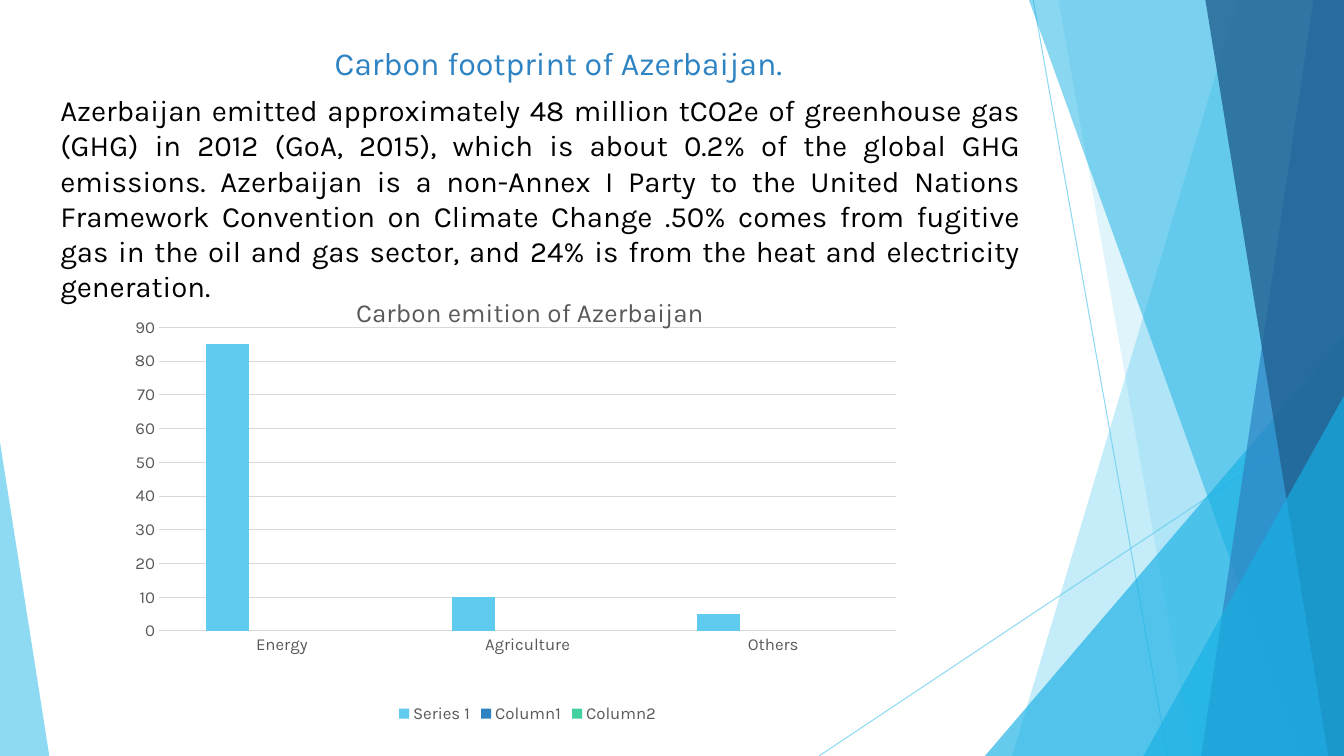
from lxml.etree import SubElement
from pptx import Presentation
from pptx.chart.data import CategoryChartData
from pptx.dml.color import RGBColor
from pptx.enum.chart import XL_CHART_TYPE, XL_LEGEND_POSITION, XL_TICK_MARK
from pptx.enum.shapes import MSO_CONNECTOR, MSO_SHAPE
from pptx.enum.text import MSO_ANCHOR, PP_ALIGN
from pptx.oxml.ns import qn
from pptx.util import Pt

EMU_PER_PX = 9525
WIDTH, HEIGHT = 1280, 720
FONT = "Karla"
COLORS = {
    "sky": "5FCBEF",
    "cyan": "17B0E4",
    "blue": "2E83C3",
    "navy": "226292",
    "green": "42D0A2",
    "black": "000000",
    "label": "595959",
    "grid": "D9D9D9",
}
SUMMARY = (
    "Azerbaijan emitted approximately 48 million tCO2e of greenhouse gas (GHG) in 2012 "
    "(GoA, 2015), which is about 0.2% of the global GHG emissions. Azerbaijan is a "
    "non-Annex I Party to the United Nations Framework Convention on Climate Change .50% "
    "comes from fugitive gas in the oil and gas sector, and 24% is from the heat and "
    "electricity generation."
)


def px(*lengths):
    return [length * EMU_PER_PX for length in lengths]


def rgb(name):
    return RGBColor.from_string(COLORS[name])


def set_alpha(shape, percent):
    for color in shape._element.spPr.iter(qn("a:srgbClr")):
        SubElement(color, qn("a:alpha"), val=str(percent * 1000))


def set_font(font, size, color):
    font.name = FONT
    font.size = Pt(size)
    font.bold = False
    font.color.rgb = rgb(color)


def place_by_fraction(part, target, **fractions):
    """Fix a chart part at fractions of the chart area."""
    layout = part.find(qn("c:layout"))
    if layout is None:
        layout = SubElement(part, qn("c:layout"))
    manual = SubElement(layout, qn("c:manualLayout"))
    if target:
        SubElement(manual, qn("c:layoutTarget"), val=target)
    for axis in "xy":
        SubElement(manual, qn(f"c:{axis}Mode"), val="edge")
    for key, fraction in fractions.items():
        SubElement(manual, qn(f"c:{key}"), val=str(fraction))
    return layout


class SlideBuilder:
    def __init__(self, slide):
        self.slide = slide
        self.shapes = slide.shapes

    def line(self, *ends):
        ray = self.shapes.add_connector(MSO_CONNECTOR.STRAIGHT, *px(*ends))
        ray.line.color.rgb = rgb("sky")
        ray.line.width = Pt(0.75)
        set_alpha(ray, 70)
        SubElement(ray._element.spPr, qn("a:effectLst"))

    def fill(self, shape, color, alpha):
        shape.shadow.inherit = False
        shape.fill.solid()
        shape.fill.fore_color.rgb = rgb(color)
        shape.line.fill.background()
        set_alpha(shape, alpha)

    def shard(self, top_x, bottom_x, color, alpha):
        """Full-height band from a slanted left edge to the slide's right edge."""
        outline = self.shapes.build_freeform(top_x, 0, scale=EMU_PER_PX)
        outline.add_line_segments([(WIDTH, 0), (WIDTH, HEIGHT), (bottom_x, HEIGHT)])
        self.fill(outline.convert_to_shape(), color, alpha)

    def corner(self, left, top, width, apex, color, alpha):
        """Triangle standing on the slide's bottom edge."""
        triangle = self.shapes.add_shape(
            MSO_SHAPE.ISOSCELES_TRIANGLE, *px(left, top, width, HEIGHT - top))
        triangle.adjustments[0] = apex
        self.fill(triangle, color, alpha)

    def set_text(self, holder, text, size, color, align):
        frame = holder.text_frame
        frame.word_wrap = True
        frame.vertical_anchor = MSO_ANCHOR.TOP
        frame.text = text
        paragraph = frame.paragraphs[0]
        paragraph.alignment = align
        set_font(paragraph.font, size, color)

    def title(self, text, *box):
        heading = self.shapes.title
        heading.left, heading.top, heading.width, heading.height = px(*box)
        self.set_text(heading, text, 23, "blue", PP_ALIGN.LEFT)

    def text(self, text, *box):
        self.set_text(self.shapes.add_textbox(*px(*box)), text, 21, "black", PP_ALIGN.JUSTIFY)

    def column_chart(self, title, categories, series, *box):
        """Draw clustered columns; series is a list of (name, values, color)."""
        data = CategoryChartData()
        data.categories = categories
        for name, values, _ in series:
            data.add_series(name, values)
        chart = self.shapes.add_chart(
            XL_CHART_TYPE.COLUMN_CLUSTERED, *px(*box), data).chart
        set_font(chart.font, 10, "black")

        chart.has_title = True
        chart.chart_title.text_frame.text = title
        set_font(chart.chart_title.text_frame.paragraphs[0].font, 18.6, "label")
        chart.chart_title.include_in_layout = False
        heading = chart.chart_title._element
        layout = place_by_fraction(heading, None, x=0.28, y=0.05)
        heading.find(qn("c:tx")).addnext(layout)

        chart.has_legend = True
        chart.legend.position = XL_LEGEND_POSITION.BOTTOM
        chart.legend.include_in_layout = False
        set_font(chart.legend.font, 12, "label")

        for axis in (chart.category_axis, chart.value_axis):
            axis.major_tick_mark = axis.minor_tick_mark = XL_TICK_MARK.NONE
            set_font(axis.tick_labels.font, 12, "label")
        chart.value_axis.minimum_scale = 0
        chart.value_axis.maximum_scale = 90
        chart.value_axis.major_unit = 10
        chart.value_axis.format.line.fill.background()
        for rule in (chart.category_axis.format.line,
                     chart.value_axis.major_gridlines.format.line):
            rule.color.rgb = rgb("grid")
            rule.width = Pt(0.75)

        plot = chart.plots[0]
        plot.vary_by_categories = False
        plot.gap_width = 219
        plot.overlap = -27
        for columns, (_, _, color) in zip(plot.series, series):
            columns.format.fill.solid()
            columns.format.fill.fore_color.rgb = rgb(color)
        area = chart._chartSpace.chart.plotArea
        area.insert(0, place_by_fraction(area, "inner", x=0.04, y=0.13, w=0.92, h=0.66))


def main():
    deck = Presentation()
    deck.slide_width, deck.slide_height = px(WIDTH, HEIGHT)
    page = SlideBuilder(deck.slides.add_slide(deck.slide_layouts[5]))

    page.line(984, 0, 1112, HEIGHT)
    page.line(WIDTH, 387, 780, HEIGHT)
    page.shard(1179, 964, "sky", 36)
    page.shard(1008, 1136, "sky", 20)
    page.corner(938, 320, 342, 1, "cyan", 66)
    page.shard(980, 1239, "cyan", 50)
    page.shard(1251, 1144, "blue", 70)
    page.shard(1148, 1265, "navy", 80)
    page.corner(1089, 377, 191, 1, "cyan", 66)
    page.corner(0, 421, 47, 0, "sky", 70)

    page.title("Carbon footprint of Azerbaijan.", 309, 36, 612, 47)
    page.text(SUMMARY, 48, 83, 933, 213)
    page.column_chart(
        "Carbon emition of Azerbaijan",
        ["Energy", "Agriculture", "Others"],
        [("Series 1", [85, 10, 5], "sky"),
         ("Column1", [None] * 3, "blue"),
         ("Column2", [None] * 3, "green")],
        121, 255, 763, 438)
    deck.save("out.pptx")


if __name__ == "__main__":
    main()
